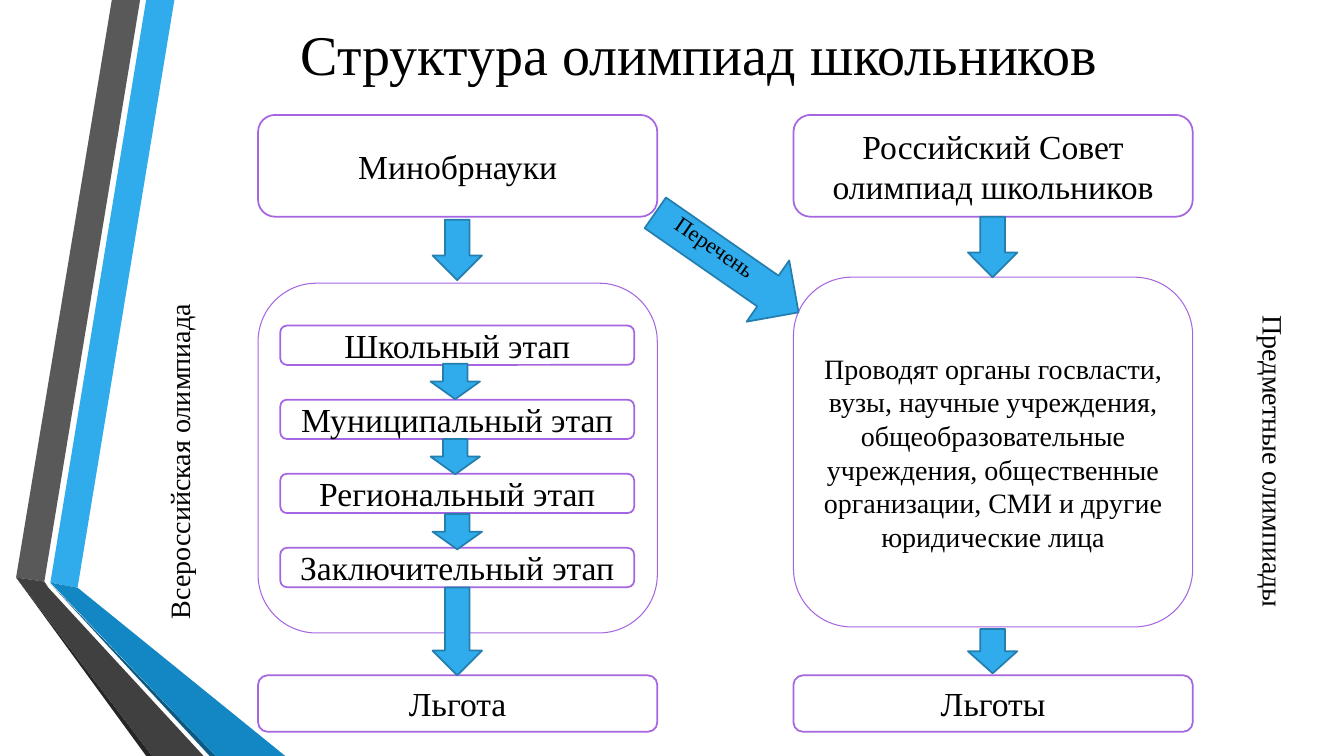
import pptx
import pptx.util
import pptx.dml.color
import pptx.enum.shapes
import pptx.enum.text

inch = pptx.util.Inches
kind = pptx.enum.shapes.MSO_SHAPE
align = pptx.enum.text.PP_ALIGN
middle = pptx.enum.text.MSO_ANCHOR.MIDDLE


def paint(shape, fill, line=None, width=1.25):
    """Set fill and outline; None leaves either one out."""
    shape.shadow.inherit = False
    for part, tone in ((shape.fill, fill), (shape.line.fill, line)):
        if tone:
            part.solid()
            part.fore_color.rgb = pptx.dml.color.RGBColor.from_string(tone)
        else:
            part.background()
    if line:
        shape.line.width = pptx.util.Pt(width)


def write(shape, text, size, side=align.CENTER):
    frame = shape.text_frame
    frame.text = text
    frame.word_wrap = True
    para = frame.paragraphs[0]
    para.alignment = side
    font = para.runs[0].font
    font.name = "Times New Roman"
    font.size = pptx.util.Pt(size)
    font.color.rgb = pptx.dml.color.RGBColor.from_string("000000")


deck = pptx.Presentation()
deck.slide_width, deck.slide_height = inch(13.33), inch(7.5)
slide = deck.slides.add_slide(deck.slide_layouts[5])
shapes = slide.shapes

# Ribbons at the left edge, points in hundredths of an inch
ribbons = [
    ("30ACEC", [(50, 578), (77, 583), (173, 0), (145, 0)]),
    ("595959", [(139, 0), (111, 0), (16, 573), (44, 577)]),
    ("262626", [(16, 573), (145, 750), (151, 750)]),
    ("0C5A82", [(50, 579), (208, 750), (214, 750)]),
    ("1287C3", [(50, 578), (214, 750), (283, 750), (77, 583)]),
    ("404040", [(202, 750), (48, 583), (44, 577), (16, 573), (151, 750)]),
]
for tone, points in ribbons:
    pen = shapes.build_freeform(*points[0], scale=inch(0.01))
    pen.add_line_segments(points[1:])
    paint(pen.convert_to_shape(), tone)

title = shapes.title
title.left, title.top = inch(1.45), inch(0.12)
title.width, title.height = inch(10.96), inch(0.82)
write(title, "Структура олимпиад школьников", 40)
title.text_frame.vertical_anchor = middle
title.text_frame.auto_size = pptx.enum.text.MSO_AUTO_SIZE.NONE

# Two columns of boxes, with the stages inside the left frame
left, right, wide = 2.56, 7.87, 3.96
first, step, tall = 3.23, 0.735, 0.39
duty = ("Проводят органы госвласти, вузы, научные учреждения, "
        "общеобразовательные учреждения, общественные организации, "
        "СМИ и другие юридические лица")
boxes = [
    (left, 1.14, wide, 1.01, "Минобрнауки", 24),
    (right, 1.14, wide, 1.01, "Российский Совет олимпиад школьников", 24),
    (left, 2.81, wide, 3.47, "", 20),
    (right, 2.75, wide, 3.47, duty, 20),
    (left, 6.7, wide, 0.56, "Льгота", 24),
    (right, 6.7, wide, 0.56, "Льготы", 24),
]
stages = ["Школьный этап", "Муниципальный этап",
          "Региональный этап", "Заключительный этап"]
for row, stage in enumerate(stages):
    boxes.append((2.78, first + row * step, 3.51, tall, stage, 24))

for x, y, w, h, text, size in boxes:
    box = shapes.add_shape(kind.ROUNDED_RECTANGLE,
                           inch(x), inch(y), inch(w), inch(h))
    if size == 20:
        paint(box, None, "A666E1", 0.75)
    else:
        paint(box, "FFFFFF", "A666E1")
    if text:
        write(box, text, size)
        box.text_frame.vertical_anchor = middle

# Arrows: left, top, width, height, turn
arrows = [
    (9.6, 2.15, 0.49, 0.6, 0),
    (4.29, 2.18, 0.49, 0.6, 0),
    (4.29, 5.83, 0.49, 0.87, 0),
    (9.6, 6.24, 0.49, 0.44, 0),
    (6.84, 1.74, 0.74, 1.73, 304.8),
]
for row, x in enumerate((4.27, 4.27, 4.29)):
    arrows.append((x, 3.61 + row * 0.745, 0.49, 0.35, 0))
for x, y, w, h, turn in arrows:
    arrow = shapes.add_shape(kind.DOWN_ARROW,
                             inch(x), inch(y), inch(w), inch(h))
    arrow.rotation = turn
    paint(arrow, "30ACEC", "247FAF")

# Turned labels
labels = [
    (6.54, 2.29, 1.18, 0.37, 34.3, "Перечень", 16, align.LEFT),
    (0.01, 4.36, 3.54, 0.44, 270, "Всероссийская олимпиада", 20, align.CENTER),
    (10.86, 4.36, 3.54, 0.44, 90, "Предметные олимпиады", 20, align.CENTER),
]
for x, y, w, h, turn, text, size, side in labels:
    label = shapes.add_textbox(inch(x), inch(y), inch(w), inch(h))
    label.rotation = turn
    write(label, text, size, side)

deck.save("out.pptx")
